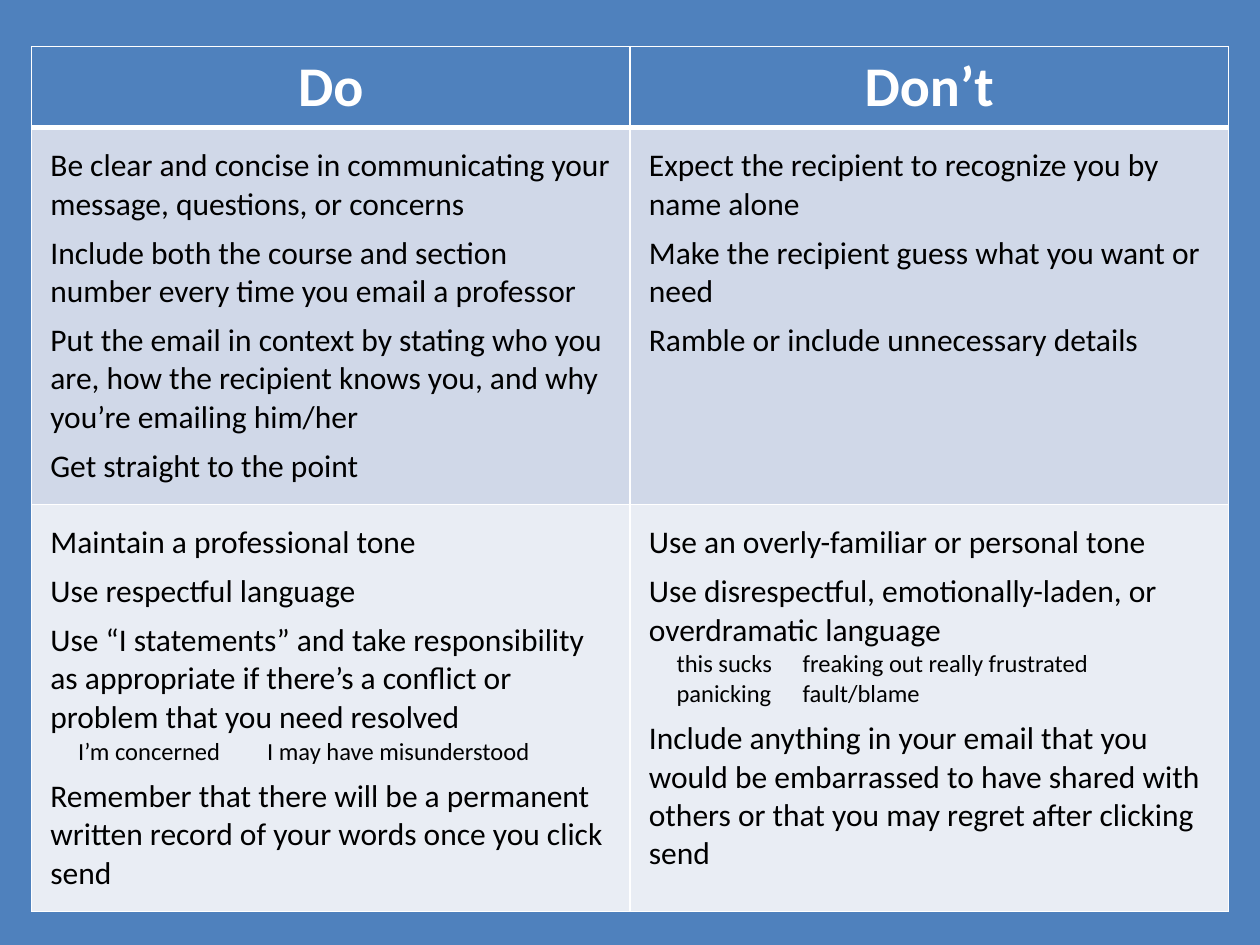
from dataclasses import dataclass

from lxml.etree import SubElement
from pptx import Presentation
from pptx.dml.color import RGBColor
from pptx.enum.text import PP_ALIGN as Align
from pptx.oxml import parse_xml
from pptx.oxml.ns import qn
from pptx.util import Inches, Pt


@dataclass(frozen=True)
class Theme:
    font: str = "Calibri"
    blue: str = "4F81BD"
    white: str = "FFFFFF"
    black: str = "000000"
    bands: tuple = ("D0D8E8", "E9EDF4")
    heading: int = 32
    body: int = 18
    example: int = 14


@dataclass(frozen=True)
class Examples:
    lines: tuple
    stops: tuple


THEME = Theme()
HEADINGS = ("Do", "Don’t")
ADVICE = (
    (
        (
            "Be clear and concise in communicating your message, questions, or concerns",
            "Include both the course and section number every time you email a professor",
            "Put the email in context by stating who you are, how the recipient knows you, "
            "and why you’re emailing him/her",
            "Get straight to the point",
        ),
        (
            "Expect the recipient to recognize you by name alone",
            "Make the recipient guess what you want or need",
            "Ramble or include unnecessary details",
        ),
    ),
    (
        (
            "Maintain a professional tone",
            "Use respectful language",
            "Use “I statements” and take responsibility as appropriate if there’s a conflict "
            "or problem that you need resolved",
            Examples((("I’m concerned", "I may have misunderstood"),), (1.79,)),
            "Remember that there will be a permanent written record of your words "
            "once you click send",
        ),
        (
            "Use an overly-familiar or personal tone",
            "Use disrespectful, emotionally-laden, or overdramatic language",
            Examples(
                (("this sucks", "freaking out", "really frustrated"), ("panicking", "fault/blame")),
                (1.2, 2.37),
            ),
            "Include anything in your email that you would be embarrassed to have shared "
            "with others or that you may regret after clicking send",
        ),
    ),
)


def add_span(para, text, size, color, bold=False):
    span = para.add_run()
    span.text = text
    span.font.name = THEME.font
    span.font.size = Pt(size)
    span.font.bold = bold
    span.font.color.rgb = RGBColor.from_string(color)


def style_cell(cell, fill, bottom=1):
    cell.fill.solid()
    cell.fill.fore_color.rgb = RGBColor.from_string(fill)
    properties = cell.fill._xPr
    widths = {"lnL": 1, "lnR": 1, "lnT": 1, "lnB": bottom}
    for index, (side, width) in enumerate(widths.items()):
        border = parse_xml(
            f'<a:{side} xmlns:a="http://schemas.openxmlformats.org/drawingml/2006/main" '
            f'w="{Pt(width)}"><a:solidFill><a:srgbClr val="{THEME.white}"/>'
            f"</a:solidFill></a:{side}>"
        )
        properties.insert(index, border)


def fill_heading(cell, text):
    style_cell(cell, THEME.blue, bottom=3)
    para = cell.text_frame.paragraphs[0]
    para.alignment = Align.CENTER
    add_span(para, text, THEME.heading, THEME.white, bold=True)


def add_examples(frame, examples):
    for line in examples.lines:
        para = frame.add_paragraph()
        para.space_after = Pt(6 if line is examples.lines[-1] else 0)
        properties = para._p.get_or_add_pPr()
        properties.set("marL", str(Inches(0.22)))
        properties.set("indent", "0")
        tabs = SubElement(properties, qn("a:tabLst"))
        for stop in examples.stops:
            SubElement(tabs, qn("a:tab"), pos=str(Inches(stop)), algn="l")
        add_span(para, "\t".join(line), THEME.example, THEME.black)


def fill_advice(cell, items, fill):
    style_cell(cell, fill)
    cell.margin_left = cell.margin_right = Inches(0.15)
    cell.margin_top = cell.margin_bottom = Inches(0.15)
    frame = cell.text_frame
    for index, item in enumerate(items):
        if isinstance(item, Examples):
            add_examples(frame, item)
            continue
        para = frame.add_paragraph() if index else frame.paragraphs[0]
        leads_examples = isinstance(items[min(index + 1, len(items) - 1)], Examples)
        para.space_after = Pt(0 if leads_examples else 6)
        add_span(para, item, THEME.body, THEME.black)


def add_advice_table(page, left, top, width, heights):
    rows, columns = len(heights), len(HEADINGS)
    table = page.shapes.add_table(rows, columns, left, top, width, sum(heights)).table
    for row, height in zip(table.rows, heights):
        row.height = height
    for column, heading in enumerate(HEADINGS):
        fill_heading(table.cell(0, column), heading)
    for row, (advice, fill) in enumerate(zip(ADVICE, THEME.bands), start=1):
        for column, items in enumerate(advice):
            fill_advice(table.cell(row, column), items, fill)


def main():
    deck = Presentation()
    deck.slide_width, deck.slide_height = Inches(10), Inches(7.5)
    page = deck.slides.add_slide(deck.slide_layouts[6])
    page.background.fill.solid()
    page.background.fill.fore_color.rgb = RGBColor.from_string(THEME.blue)
    heights = [Inches(height) for height in (0.64, 2.99, 3.14)]
    add_advice_table(page, Inches(0.25), Inches(0.37), Inches(9.5), heights)
    deck.save("out.pptx")


if __name__ == "__main__":
    main()
